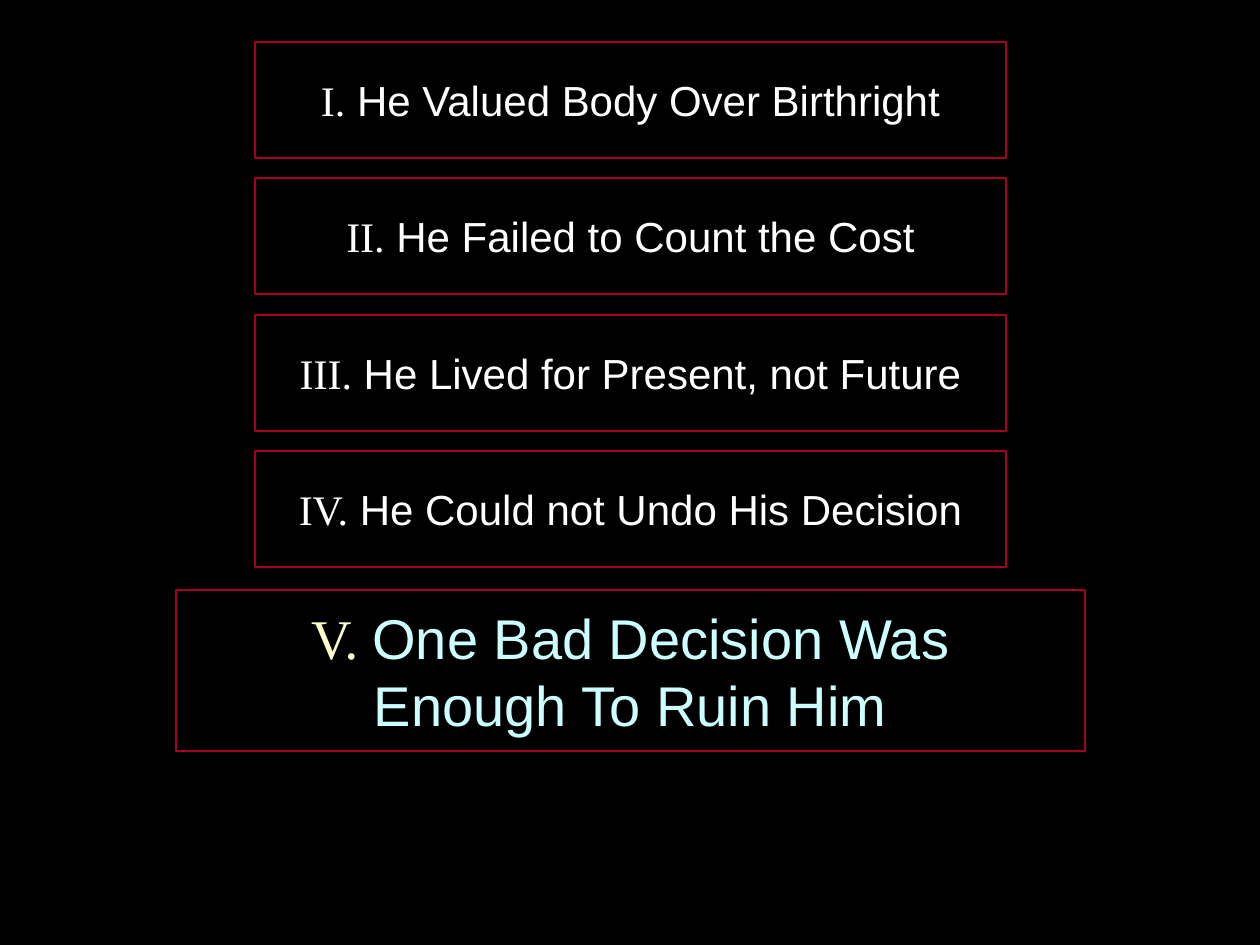
from lxml.etree import SubElement
from pptx import Presentation
from pptx.dml.color import RGBColor
from pptx.enum.shapes import MSO_SHAPE
from pptx.enum.text import MSO_ANCHOR, MSO_AUTO_SIZE, PP_ALIGN
from pptx.oxml.ns import qn
from pptx.util import Emu, Pt

COLORS = {
    "background": "000000",
    "border": "A50021",
    "point": "FFFFFF",
    "conclusion_numeral": "FFFFCC",
    "conclusion": "CCFFFF",
}
POINTS = [
    ("I.", " He Valued Body Over Birthright"),
    ("II.", " He Failed to Count the Cost"),
    ("III.", " He Lived for Present, not Future"),
    ("IV.", " He Could not Undo His Decision"),
]
CONCLUSION = ("V. ", "One Bad Decision Was\nEnough To Ruin Him")

SLIDE_SIZE = (1260, 945)
POINT_LEFT, POINT_TOP, POINT_WIDTH, POINT_HEIGHT = 255, 42, 751, 116
TWO_ROWS = 273
CONCLUSION_BOX = (176, 590, 909, 161)

FRAME_FORMAT = {
    "auto_size": MSO_AUTO_SIZE.NONE,
    "word_wrap": True,
    "vertical_anchor": MSO_ANCHOR.MIDDLE,
}


def px(count):
    return Emu(round(count * 914400 / 126))


def rgb(name):
    return RGBColor.from_string(COLORS[name])


def add_text(paragraph, text, font_format, color):
    for index, line in enumerate(text.split("\n")):
        if index:
            paragraph.add_line_break()
        run = paragraph.add_run()
        run.text = line
        for key, value in font_format.items():
            setattr(run.font, key, value)
        run.font.color.rgb = rgb(color)


def fill_box(box, bounds, heading, size, numeral_color, text_color):
    """Place and outline a box, then write its numeral and wording."""
    for side, length in zip(("left", "top", "width", "height"), bounds):
        setattr(box, side, px(length))
    box.fill.background()
    box.line.color.rgb = rgb("border")
    box.line.width = Pt(0.75)
    for key, value in FRAME_FORMAT.items():
        setattr(box.text_frame, key, value)

    paragraph = box.text_frame.paragraphs[0]
    paragraph.alignment = PP_ALIGN.CENTER
    properties = paragraph._p.get_or_add_pPr()
    properties.set("marL", "0")
    properties.set("indent", "0")
    space_before = SubElement(properties, qn("a:spcBef"))
    SubElement(space_before, qn("a:spcPct")).set("val", "20000")
    SubElement(properties, qn("a:buNone"))

    numeral, wording = heading
    add_text(paragraph, numeral, {"name": "Times New Roman", "size": Pt(size)}, numeral_color)
    add_text(paragraph, wording, {"name": "Arial", "size": Pt(size)}, text_color)


def add_rectangle(slide):
    rectangle = slide.shapes.add_shape(MSO_SHAPE.RECTANGLE, 0, 0, px(1), px(1))
    rectangle.shadow.inherit = False
    return rectangle


def main():
    presentation = Presentation()
    presentation.slide_width, presentation.slide_height = map(px, SLIDE_SIZE)
    slide = presentation.slides.add_slide(presentation.slide_layouts[1])
    slide.background.fill.solid()
    slide.background.fill.fore_color.rgb = rgb("background")
    title = slide.shapes.title
    title.element.getparent().remove(title.element)

    for index, heading in enumerate(POINTS):
        box = add_rectangle(slide) if index else slide.placeholders[1]
        top = POINT_TOP + index * TWO_ROWS // 2
        bounds = (POINT_LEFT, top, POINT_WIDTH, POINT_HEIGHT)
        fill_box(box, bounds, heading, 24, "point", "point")
    fill_box(add_rectangle(slide), CONCLUSION_BOX, CONCLUSION, 32,
             "conclusion_numeral", "conclusion")

    presentation.save("out.pptx")


if __name__ == "__main__":
    main()
